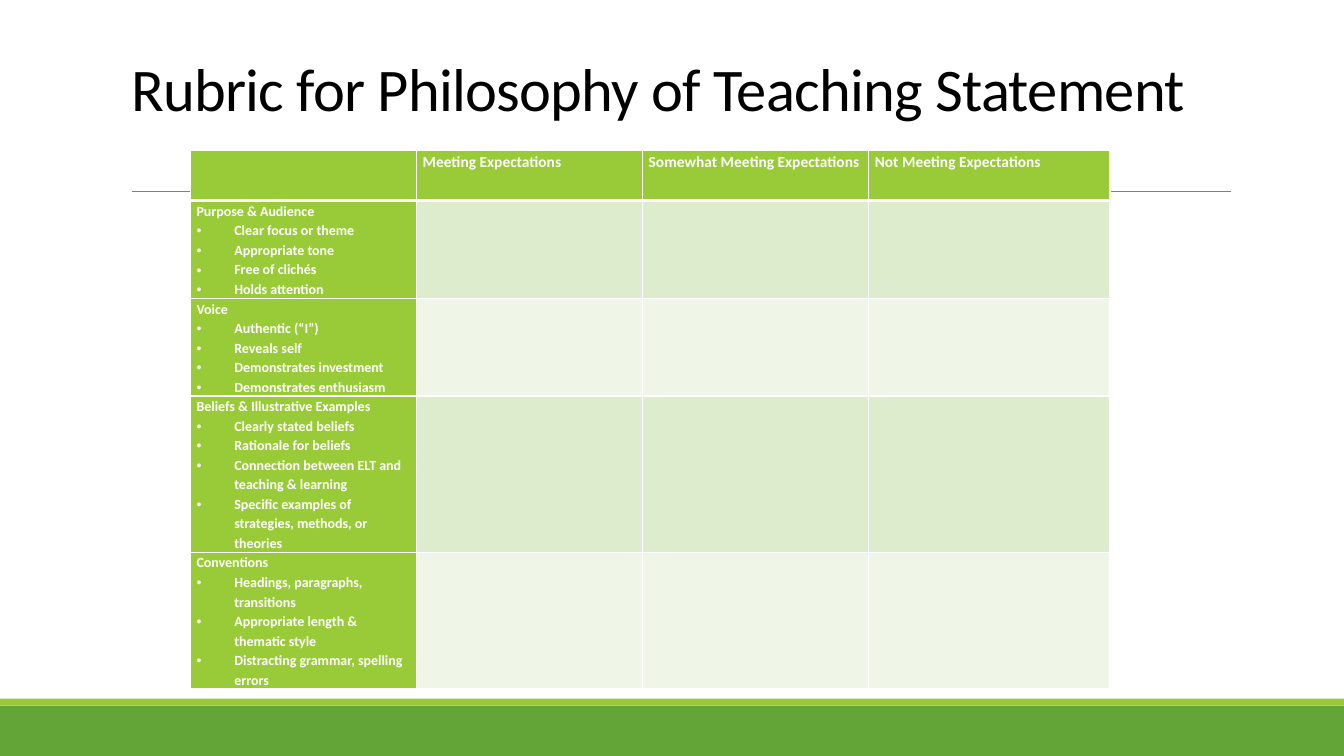
from lxml import etree
from pptx import Presentation
from pptx.dml.color import RGBColor
from pptx.enum.shapes import MSO_CONNECTOR, MSO_SHAPE
from pptx.enum.text import MSO_ANCHOR, MSO_AUTO_SIZE, PP_ALIGN
from pptx.oxml.ns import qn
from pptx.util import Pt

STRAIGHT, RECT = MSO_CONNECTOR.STRAIGHT, MSO_SHAPE.RECTANGLE
TOP, BOTTOM = MSO_ANCHOR.TOP, MSO_ANCHOR.BOTTOM
NO_FIT, LEFT = MSO_AUTO_SIZE.NONE, PP_ALIGN.LEFT

# Content
TITLE = "Rubric for Philosophy of Teaching Statement"
RATINGS = ["Meeting Expectations", "Somewhat Meeting Expectations",
           "Not Meeting Expectations"]
CRITERIA = [
    ("Purpose & Audience", ["Clear focus or theme", "Appropriate tone",
                            "Free of clichés", "Holds attention"]),
    ("Voice", ["Authentic (“I”)", "Reveals self",
               "Demonstrates investment", "Demonstrates enthusiasm"]),
    ("Beliefs & Illustrative Examples",
     ["Clearly stated beliefs", "Rationale for beliefs",
      "Connection between ELT and teaching & learning",
      "Specific examples of strategies, methods, or theories"]),
    ("Conventions", ["Headings, paragraphs, transitions",
                     "Appropriate length & thematic style",
                     "Distracting grammar, spelling errors"]),
]

# Style and measures, in points
FONT = "Calibri"
WHITE, BLACK, GRAY = "FFFFFF", "000000", "808080"
LIME, GREEN = "99CB38", "63A537"
BANDS = ["DEECCE", "EFF6E8"]
SLIDE_W, SLIDE_H = 960, 540
BAR_TOP, STRIPE_H = 504, 5
COL_WIDTHS = [161.5, 161.5, 161.5, 172.3]
ROW_HEIGHTS = [36, 66.2, 66.2, 105.8, 92.2]
INDENT = 27


def rgb(hex_color):
    return RGBColor.from_string(hex_color)


def add_run(paragraph, text, size, color, bold=False):
    run = paragraph.add_run()
    run.text = text
    font = run.font
    font.name, font.size, font.bold = FONT, Pt(size), bold
    font.color.rgb = rgb(color)
    return run


def add_bar(slide, top, height, color):
    bar = slide.shapes.add_shape(RECT, 0, Pt(top), Pt(SLIDE_W), Pt(height))
    bar.shadow.inherit = False
    bar.fill.solid()
    bar.fill.fore_color.rgb = rgb(color)
    bar.line.fill.background()


def style_cell(cell, color, top_width, bottom_width):
    properties = cell._tc.get_or_add_tcPr()
    widths = {"a:lnL": 1, "a:lnR": 1, "a:lnT": top_width, "a:lnB": bottom_width}
    for side, width in widths.items():
        border = etree.SubElement(properties, qn(side), w=str(Pt(width)))
        fill = etree.SubElement(border, qn("a:solidFill"))
        etree.SubElement(fill, qn("a:srgbClr"), val=WHITE)
    cell.fill.solid()
    cell.fill.fore_color.rgb = rgb(color)
    cell.margin_left = cell.margin_right = Pt(4.3)
    cell.margin_top = cell.margin_bottom = 0
    cell.vertical_anchor = TOP


def write_lines(cell, heading, bullets, size):
    frame = cell.text_frame
    for index, text in enumerate([heading, *bullets]):
        line = frame.add_paragraph() if index else frame.paragraphs[0]
        line.line_spacing = 1.15
        if index:
            properties = line._p.get_or_add_pPr()
            properties.set("marL", str(Pt(INDENT)))
            properties.set("indent", str(-Pt(INDENT)))
            etree.SubElement(properties, qn("a:buFont"), typeface="Arial")
            etree.SubElement(properties, qn("a:buChar"), char="•")
        add_run(line, text, size, WHITE, bold=True)


deck = Presentation()
deck.slide_width, deck.slide_height = Pt(SLIDE_W), Pt(SLIDE_H)
slide = deck.slides.add_slide(deck.slide_layouts[5])

# Footer bars and the rule behind the table
add_bar(slide, BAR_TOP, SLIDE_H - BAR_TOP, GREEN)
add_bar(slide, BAR_TOP - STRIPE_H, STRIPE_H, LIME)
rule = slide.shapes.add_connector(STRAIGHT, Pt(94.3), Pt(136.8),
                                  Pt(879.1), Pt(136.8))
rule.line.color.rgb = rgb(GRAY)
rule.line.width = Pt(0.5)
etree.SubElement(rule._element.spPr, qn("a:effectLst"))

# Title, lifted above the table by its bottom inset
title = slide.shapes.title
title.left, title.top, title.width, title.height = map(Pt, (86.4, 22.3, 792, 114.5))
heading = title.text_frame
heading.word_wrap = True
heading.auto_size = NO_FIT
heading.vertical_anchor = BOTTOM
heading.margin_left = heading.margin_right = Pt(7.2)
heading.margin_top, heading.margin_bottom = Pt(3.6), Pt(48.4)
heading_line = heading.paragraphs[0]
heading_line.alignment = LEFT
heading_line.line_spacing = 0.85
title_run = add_run(heading_line, TITLE, 43.2, BLACK)
title_run.font._element.set("spc", "-50")

# Rubric table
rubric = slide.shapes.add_table(
    len(ROW_HEIGHTS), len(COL_WIDTHS), Pt(136.1), Pt(107.3),
    Pt(sum(COL_WIDTHS)), Pt(sum(ROW_HEIGHTS))).table
for column, width in zip(rubric.columns, COL_WIDTHS):
    column.width = Pt(width)
for row, height in zip(rubric.rows, ROW_HEIGHTS):
    row.height = Pt(height)

for r, row in enumerate(rubric.rows):
    for c, cell in enumerate(row.cells):
        color = LIME if r == 0 or c == 0 else BANDS[(r - 1) % 2]
        style_cell(cell, color, 3 if r == 1 else 1, 3 if r == 0 else 1)

for c, rating in enumerate(RATINGS, start=1):
    write_lines(rubric.cell(0, c), rating, [], 11)
for r, (criterion, points) in enumerate(CRITERIA, start=1):
    write_lines(rubric.cell(r, 0), criterion, points, 10)

deck.save("out.pptx")
